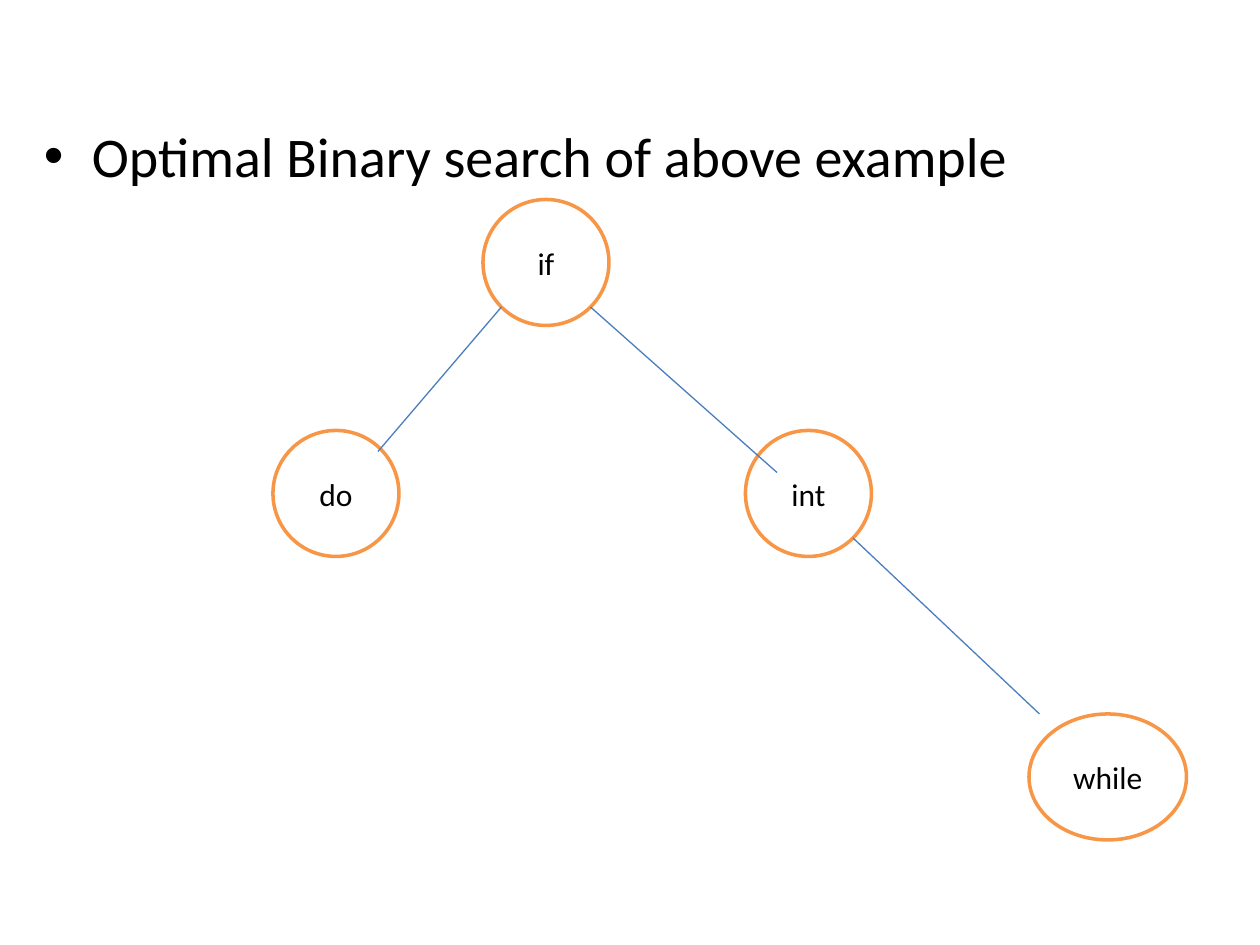
from math import cos, pi

from lxml.etree import SubElement
from pptx import Presentation
from pptx.dml.color import RGBColor
from pptx.enum.shapes import MSO_CONNECTOR as Connector, MSO_SHAPE as Shape
from pptx.enum.text import MSO_ANCHOR as Anchor, PP_ALIGN as Align
from pptx.oxml.ns import qn
from pptx.util import Inches, Pt

COLORS = {"text": "000000", "node": "FFFFFF", "ring": "F79646", "edge": "4B7EBC"}
UNIT = Inches(10) // 120  # the slide is a grid of 120 columns by 90 rows
NODE_SIZE = 12
# word: (column, row, columns wide)
NODES = {
    "if": (46, 19, NODE_SIZE),
    "do": (26, 41, NODE_SIZE),
    "int": (71, 41, NODE_SIZE),
    "while": (98, 68, 15),
}
# parent, side it leaves from (-1 left, 1 right), end column and row
EDGES = [("if", -1, 36, 43), ("if", 1, 74, 45), ("int", 1, 99, 68)]


def grid(*cells):
    return [round(cell * UNIT) for cell in cells]


def color(name):
    return RGBColor.from_string(COLORS[name])


def write(paragraph, words, size):
    run = paragraph.add_run()
    run.text = words
    for key, value in {"name": "Calibri", "size": Pt(size)}.items():
        setattr(run.font, key, value)
    run.font.color.rgb = color("text")


def add_heading(slide, words):
    frame = slide.shapes.add_textbox(*grid(3, 11, 111, 69.33)).text_frame
    frame.word_wrap = True
    paragraph = frame.paragraphs[0]
    write(paragraph, words, 32)
    indent = Inches(0.38)
    props = paragraph._p.get_or_add_pPr()
    props.set("marL", str(indent))
    props.set("indent", str(-indent))
    SubElement(props, qn("a:buFont"), typeface="Arial")
    SubElement(props, qn("a:buChar"), char="•")


def add_node(slide, word, column, row, width):
    node = slide.shapes.add_shape(Shape.OVAL, *grid(column, row, width, NODE_SIZE))
    node.shadow.inherit = False
    node.fill.solid()
    node.fill.fore_color.rgb = color("node")
    node.line.color.rgb = color("ring")
    node.line.width = Pt(2)
    frame = node.text_frame
    for key, value in {"word_wrap": True, "vertical_anchor": Anchor.MIDDLE}.items():
        setattr(frame, key, value)
    frame.paragraphs[0].alignment = Align.CENTER
    write(frame.paragraphs[0], word, 18)


def add_edge(slide, parent, side, end_column, end_row):
    """Draw a line from the parent's lower diagonal point to a grid point."""
    column, row, _ = NODES[parent]
    radius = NODE_SIZE / 2
    reach = radius * cos(pi / 4)
    start = (column + radius + side * reach, row + radius + reach)
    edge = slide.shapes.add_connector(Connector.STRAIGHT, *grid(*start, end_column, end_row))
    edge.line.color.rgb = color("edge")
    edge.line.width = Pt(0.75)
    SubElement(edge._element.spPr, qn("a:effectLst"))


def main():
    deck = Presentation()
    deck.slide_width, deck.slide_height = grid(120, 90)
    slide = deck.slides.add_slide(deck.slide_layouts[6])
    add_heading(slide, "Optimal Binary search of above example")
    for word, place in NODES.items():
        add_node(slide, word, *place)
    for edge in EDGES:
        add_edge(slide, *edge)
    deck.save("out.pptx")


if __name__ == "__main__":
    main()
